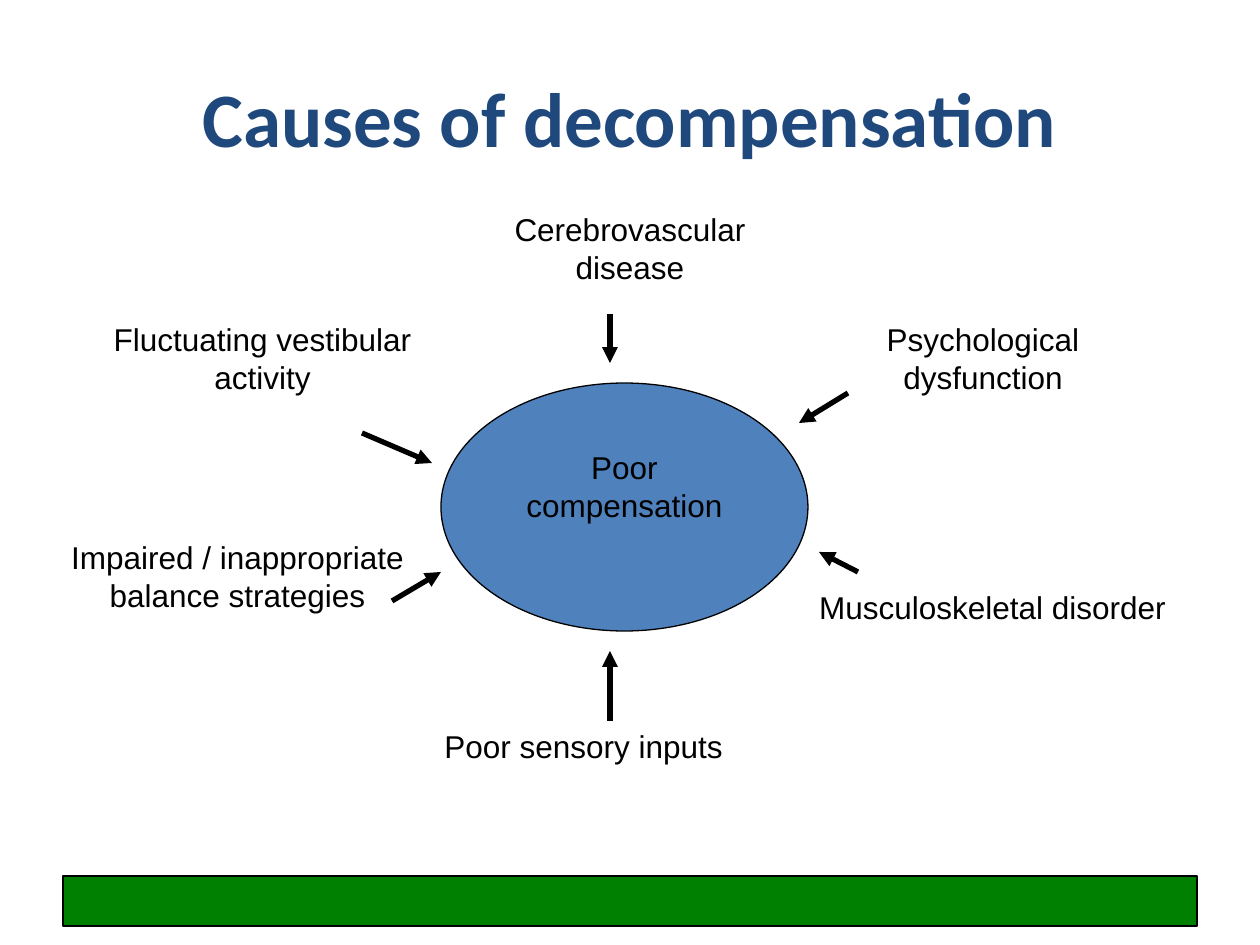
from dataclasses import dataclass

from lxml.etree import SubElement
from pptx import Presentation
from pptx.dml.color import RGBColor
from pptx.enum.shapes import MSO_CONNECTOR, MSO_SHAPE
from pptx.enum.text import MSO_ANCHOR, MSO_AUTO_SIZE, PP_ALIGN
from pptx.oxml.ns import qn
from pptx.util import Emu, Pt


@dataclass(frozen=True)
class Theme:
    ink: RGBColor = RGBColor(0, 0, 0)
    title: RGBColor = RGBColor(0x1F, 0x49, 0x7D)
    hub: RGBColor = RGBColor(0x4F, 0x81, 0xBD)
    footer: RGBColor = RGBColor(0, 0x80, 0)
    title_font: str = "Calibri"
    body_font: str = "Arial"
    title_size: int = 44
    body_size: int = 18
    outline: float = 0.75
    arrow: int = 3


THEME = Theme()
EMU_PER_PX = 914400 / 126
PAGE_SIZE = (1260, 945)

# Boxes are left, top, width, height in px
TITLE = ("Causes of decompensation", (63, 38, 1134, 157))
FOOTER_BAR = (63, 876, 1134, 50)
HUB = (441, 383, 367, 248)
CENTER, LEFT = PP_ALIGN.CENTER, PP_ALIGN.LEFT
LABELS = [
    ("Poor compensation", (481, 442, 287, 113), CENTER),
    ("Cerebrovascular disease", (451, 204, 358, 113), CENTER),
    ("Psychological dysfunction", (809, 314, 348, 113), CENTER),
    ("Musculoskeletal disorder", (799, 582, 387, 113), CENTER),
    ("Poor sensory inputs", (432, 721, 397, 63), LEFT),
    ("Fluctuating vestibular activity", (74, 314, 377, 113), CENTER),
    ("Impaired / inappropriate balance strategies", (34, 532, 407, 164), CENTER),
]
# Each arrow runs from a cause towards the hub
ARROWS = [
    ((848, 393), (799, 423)),
    ((858, 572), (819, 552)),
    ((610, 721), (610, 651)),
    ((392, 601), (441, 572)),
    ((362, 433), (432, 463)),
    ((610, 314), (610, 363)),
]


def px(*values):
    return [Emu(round(value * EMU_PER_PX)) for value in values]


def write(frame, text, font, size, color, align, bold=False):
    frame.word_wrap = True
    para = frame.paragraphs[0]
    para.alignment = align
    span = para.add_run()
    span.text = text
    span.font.name = font
    span.font.size = Pt(size)
    span.font.bold = bold
    span.font.color.rgb = color


def add_outlined(page, kind, area, fill):
    shape = page.shapes.add_shape(kind, *px(*area))
    shape.shadow.inherit = False
    shape.fill.solid()
    shape.fill.fore_color.rgb = fill
    shape.line.color.rgb = THEME.ink
    shape.line.width = Pt(THEME.outline)


def add_title(page, text, area):
    title = page.shapes.title
    title.left, title.top, title.width, title.height = px(*area)
    title.text_frame.vertical_anchor = MSO_ANCHOR.MIDDLE
    write(title.text_frame, text, THEME.title_font, THEME.title_size,
          THEME.title, CENTER, bold=True)


def add_label(page, text, area, align):
    box = page.shapes.add_textbox(*px(*area))
    box.text_frame.auto_size = MSO_AUTO_SIZE.SHAPE_TO_FIT_TEXT
    write(box.text_frame, text, THEME.body_font, THEME.body_size,
          THEME.ink, align)


def add_arrow(page, start, end):
    arrow = page.shapes.add_connector(MSO_CONNECTOR.STRAIGHT, *px(*start, *end))
    arrow.line.color.rgb = THEME.ink
    arrow.line.width = Pt(THEME.arrow)
    SubElement(arrow.line._get_or_add_ln(), qn("a:tailEnd"), type="triangle")
    SubElement(arrow._element.spPr, qn("a:effectLst"))


def main():
    deck = Presentation()
    deck.slide_width, deck.slide_height = px(*PAGE_SIZE)
    page = deck.slides.add_slide(deck.slide_layouts.get_by_name("Title Only"))
    add_outlined(page, MSO_SHAPE.RECTANGLE, FOOTER_BAR, THEME.footer)
    add_title(page, *TITLE)
    add_outlined(page, MSO_SHAPE.OVAL, HUB, THEME.hub)
    for label in LABELS:
        add_label(page, *label)
    for start, end in ARROWS:
        add_arrow(page, start, end)
    deck.save("out.pptx")


if __name__ == "__main__":
    main()
